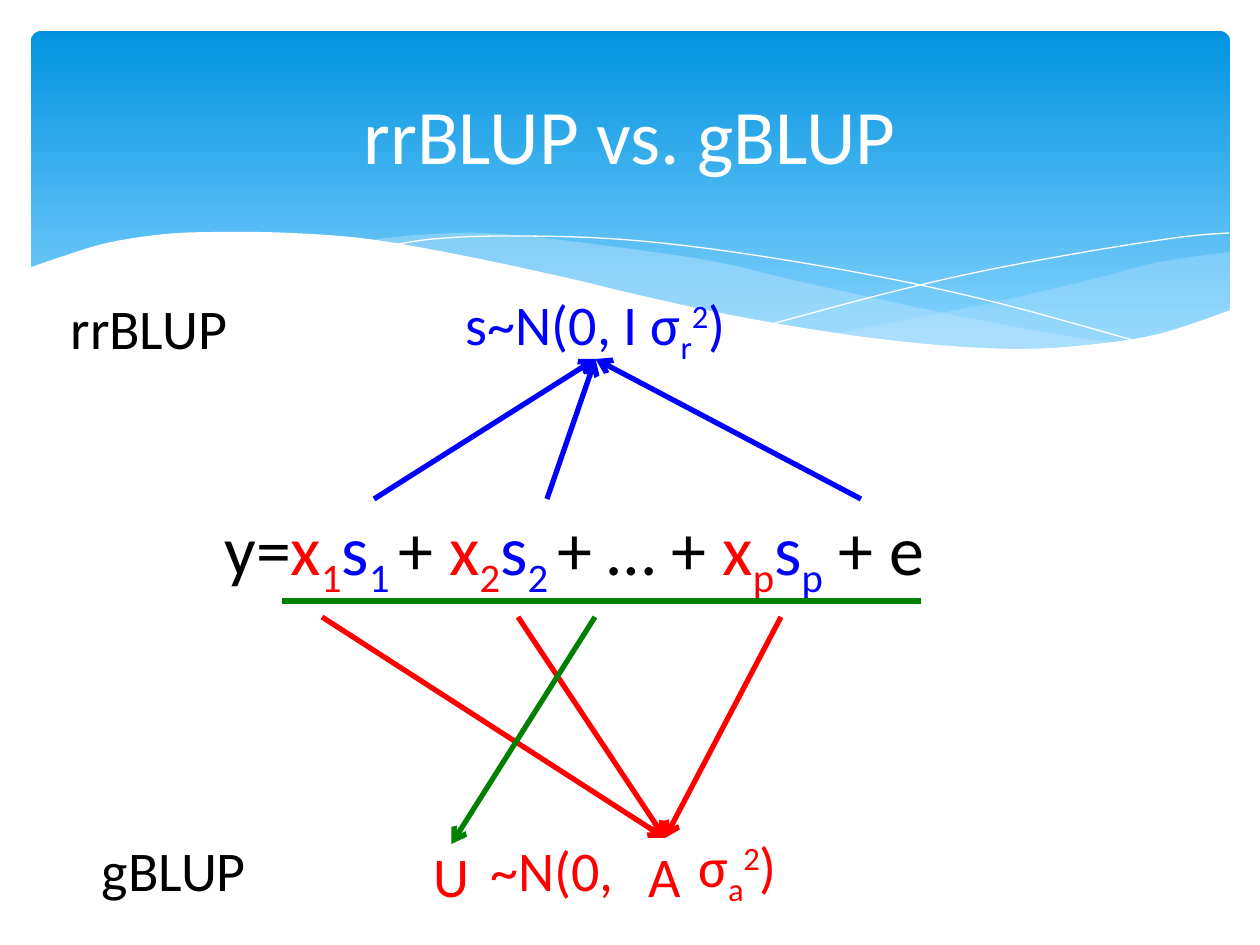
from lxml import etree
from pptx import Presentation
from pptx.dml.color import RGBColor
from pptx.enum import shapes, text
from pptx.oxml.ns import qn
from pptx import util as u

SCALE = 914400 / 126
BLACK, WHITE, RED, BLUE, GREEN = "000000", "FFFFFF", "FF0000", "0000FF", "008000"
SUB, SUPER = -25, 30
BOTTOM_SITE, TOP_SITE = 2, 0


def px(value):
    return u.Emu(round(value * SCALE))


def color(value):
    return RGBColor.from_string(value)


def smooth(points, steps=5):
    """Return points along a Catmull-Rom curve through the given points."""
    padded = [points[0], *points, points[-1]]
    result = [points[0]]
    for a, b, c, d in zip(padded, padded[1:], padded[2:], padded[3:]):
        for step in range(1, steps + 1):
            t = step / steps
            result.append(tuple(
                (2 * q + (r - p) * t + (2 * p - 5 * q + 4 * r - s) * t ** 2
                 + (3 * q - p - 3 * r + s) * t ** 3) / 2
                for p, q, r, s in zip(a, b, c, d)))
    return result


class SlideBuilder:
    font = "Calibri"
    line_width = u.Pt(3)

    def __init__(self, presentation):
        self.slide = presentation.slides.add_slide(presentation.slide_layouts[6])
        self.shapes = self.slide.shapes

    def banner(self, left, top, width, height):
        shape = self.shapes.add_shape(shapes.MSO_SHAPE.ROUNDED_RECTANGLE,
                                      px(left), px(top), px(width), px(height))
        shape.adjustments[0] = 0.03
        shape.shadow.inherit = False
        shape.line.fill.background()
        shape.fill.gradient()
        shape.fill.gradient_angle = 270
        stops = zip(shape.fill.gradient_stops, (0, 0.9), ("0293E0", "83D3FE"))
        for stop, position, tone in stops:
            stop.position = position
            stop.color.rgb = color(tone)

    def outline(self, points, fill=None, alpha=100):
        """Draw a filled area, or a white hairline when there is no fill."""
        corners = [(px(x), px(y)) for x, y in points]
        builder = self.shapes.build_freeform(*corners[0])
        builder.add_line_segments(corners[1:], close=fill is not None)
        shape = builder.convert_to_shape()
        shape.shadow.inherit = False
        if fill is None:
            shape.fill.background()
            shape.line.color.rgb = color(WHITE)
            shape.line.width = 0
            return
        shape.line.fill.background()
        shape.fill.solid()
        shape.fill.fore_color.rgb = color(fill)
        if alpha < 100:
            tone = shape.fill._xPr.find(".//" + qn("a:srgbClr"))
            etree.SubElement(tone, qn("a:alpha")).set("val", str(alpha * 1000))

    def label(self, left, top, width, height, runs, size=32,
              align=text.PP_ALIGN.CENTER, anchor=text.MSO_ANCHOR.MIDDLE):
        """Add text; each run is (words, colour) or (words, colour, baseline)."""
        box = self.shapes.add_textbox(px(left), px(top), px(width), px(height))
        frame = box.text_frame
        frame.word_wrap = True
        frame.vertical_anchor = anchor
        paragraph = frame.paragraphs[0]
        paragraph.alignment = align
        for words, tone, *baseline in runs:
            run = paragraph.add_run()
            run.text = words
            run.font.name = self.font
            run.font.size = u.Pt(size)
            run.font.color.rgb = color(tone)
            if baseline:
                run._r.get_or_add_rPr().set("baseline", str(baseline[0] * 1000))
        return box

    def line(self, start, end, tone, arrow=True, target=None, site=None):
        connector = self.shapes.add_connector(
            shapes.MSO_CONNECTOR.STRAIGHT, *map(px, (*start, *end)))
        if target is not None:
            connector.end_connect(target, site)
        connector.line.color.rgb = color(tone)
        connector.line.width = self.line_width
        if arrow:
            etree.SubElement(connector.line._get_or_add_ln(),
                             qn("a:tailEnd")).set("type", "arrow")
        etree.SubElement(connector._element.spPr, qn("a:effectLst"))


def main():
    presentation = Presentation()
    presentation.slide_width = px(1260)
    presentation.slide_height = px(945)
    page = SlideBuilder(presentation)

    # Banner with translucent ribbons, hairlines and a white wave
    page.banner(31, 31, 1199, 340)
    page.outline(
        smooth([(1230, 252), (1160, 262), (1085, 281), (981, 305), (833, 334)])
        + smooth([(833, 334), (906, 343), (984, 349), (1052, 349), (1120, 344),
                  (1178, 330), (1230, 311)]), "C6E7FC", 29)
    page.outline(
        smooth([(360, 241), (432, 234), (503, 234), (616, 247), (717, 262),
                (793, 280), (934, 311), (1055, 334), (1125, 344)])
        + smooth([(1125, 344), (1068, 349), (1003, 350), (927, 347), (838, 335),
                  (713, 312), (566, 280), (456, 256), (360, 241)]), "C6E7FC", 40)
    page.outline(smooth([(389, 246), (433, 239), (505, 236), (616, 239), (733, 252),
                         (876, 276), (1002, 304), (1143, 343)]))
    page.outline(smooth([(772, 324), (876, 296), (978, 272), (1091, 251),
                         (1182, 237), (1229, 233)]))
    page.outline(
        smooth([(1231, 310), (1159, 334), (1088, 345), (1019, 349), (937, 345),
                (842, 334), (730, 315), (634, 294), (563, 277), (460, 255),
                (368, 239), (290, 233), (223, 232), (166, 234), (107, 243),
                (58, 258), (29, 268)]) + [(29, 415), (1231, 415)], WHITE)

    # Title
    page.label(63, 47, 1134, 173, [("rrBLUP vs. gBLUP", WHITE)], size=44)

    # Model equation
    def term(index, gap=" "):
        return [("x", RED), (index, RED, SUB), ("s", BLUE), (index + gap, BLUE, SUB)]

    equation = [("y=", BLACK), *term("1"), ("+ ", BLACK), *term("2"),
                ("+ … + ", BLACK), *term("p", ""), (" + e", BLACK)]
    page.label(212, 499, 932, 97, equation, size=40,
               align=text.PP_ALIGN.LEFT, anchor=text.MSO_ANCHOR.TOP)

    # Marker effects distribution, with arrows from each s
    def variance(index, tone):
        return [("σ", tone), (index, tone, SUB), ("2", tone, SUPER), (")", tone)]

    effects = page.label(397, 296, 397, 63,
                         [("s~N(0, I ", BLUE), *variance("r", BLUE)])
    for x in (374, 547, 861):
        page.line((x, 499), (595, 359), BLUE, target=effects, site=BOTTOM_SITE)

    # Breeding value distribution, with arrows from each x
    page.label(446, 838, 212, 63, [("~N(0,", RED)])
    for x in (781, 518, 322):
        page.line((x, 617), (665, 838), RED)
    value = page.label(403, 844, 97, 63, [("U", RED)])
    page.label(620, 844, 89, 63, [("A", RED)])
    page.label(665, 838, 145, 63, variance("a", RED))

    # Underlined sum leading to U
    page.line((282, 601), (921, 601), GREEN, arrow=False)
    page.line((595, 617), (452, 844), GREEN, target=value, site=TOP_SITE)

    # Method names
    page.label(31, 296, 236, 63, [("rrBLUP", BLACK)])
    page.label(63, 838, 222, 63, [("gBLUP", BLACK)])

    presentation.save("out.pptx")


if __name__ == "__main__":
    main()
